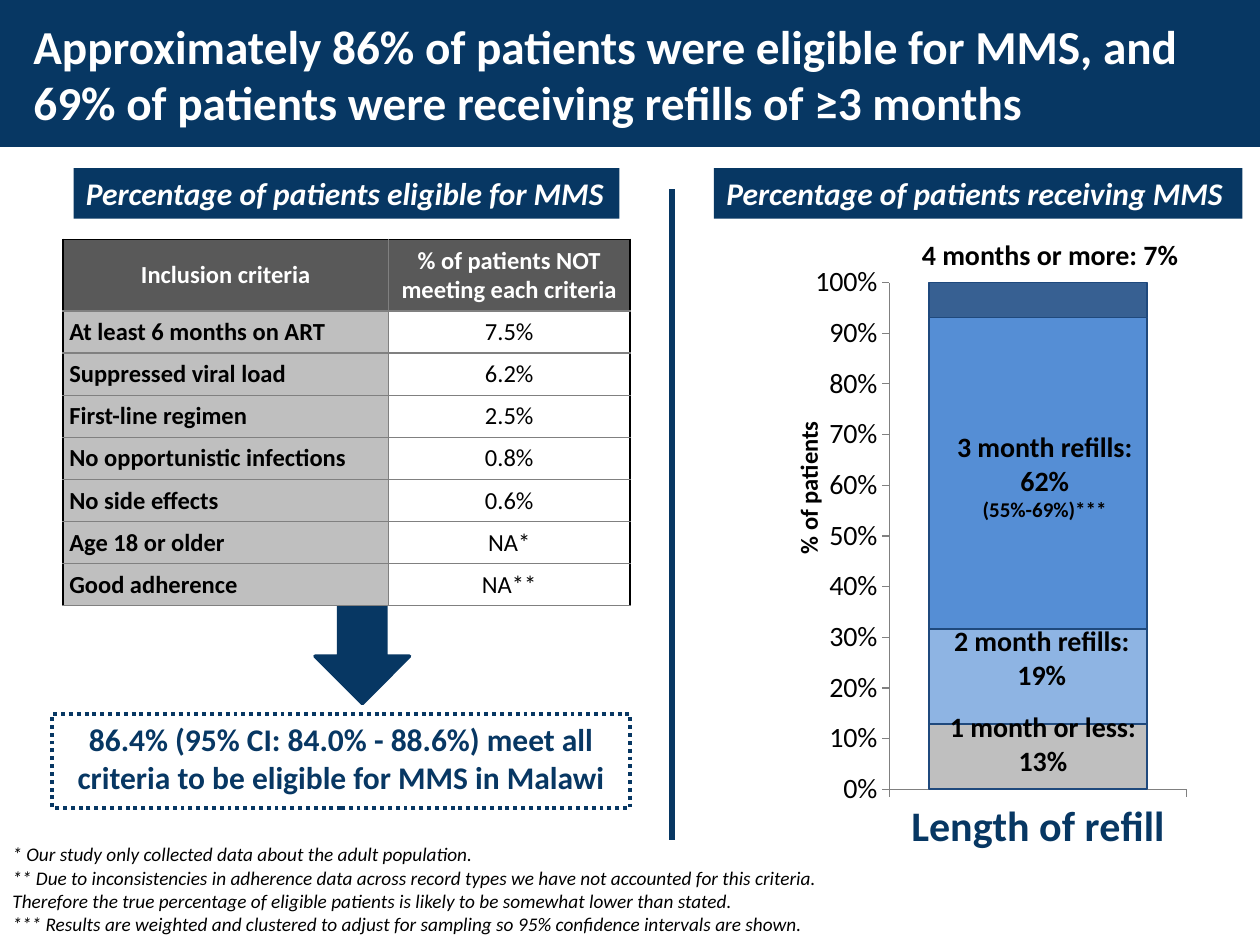
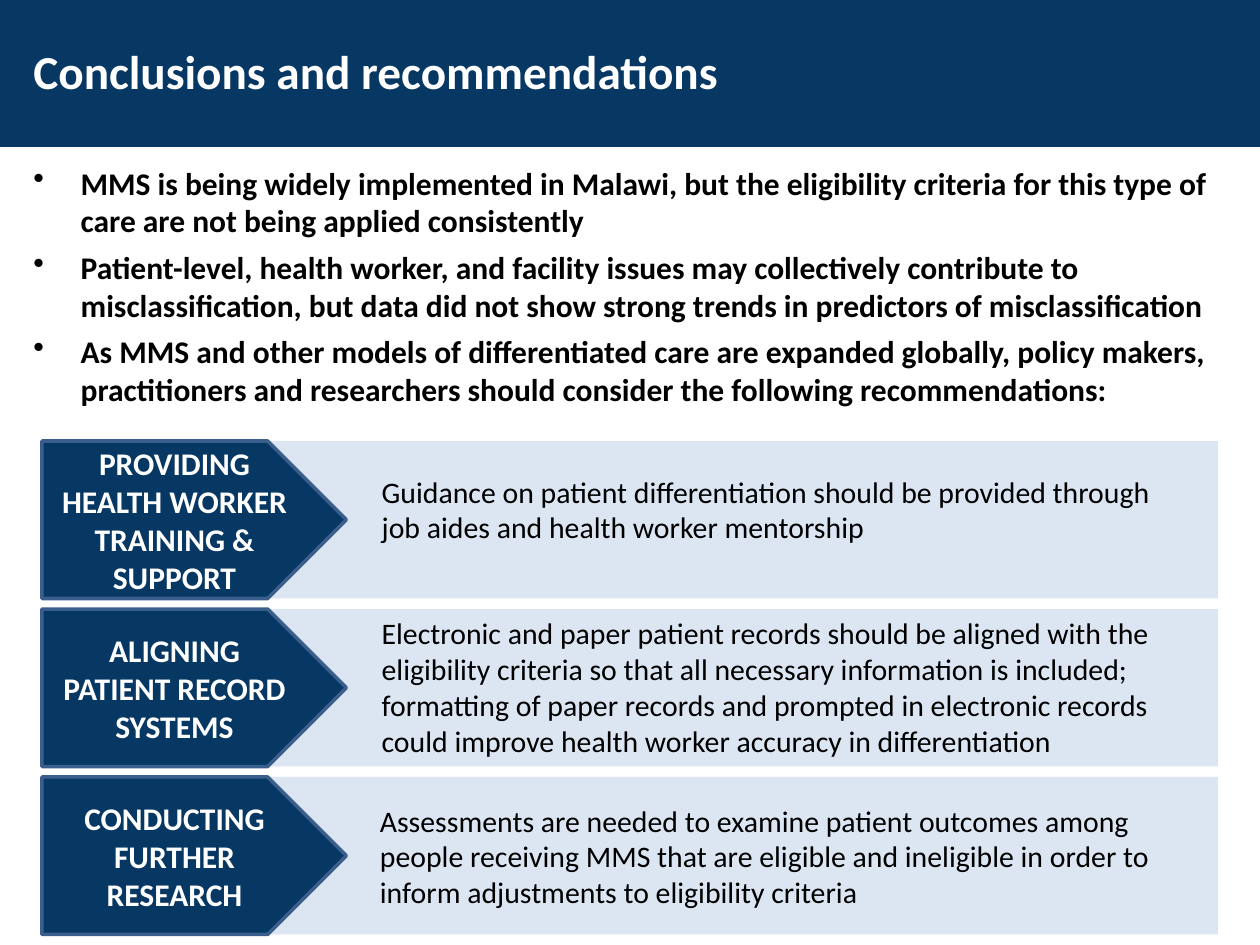
from dataclasses import dataclass
from typing import Optional

import lxml.etree
import pptx
import pptx.chart.data
import pptx.dml.color
import pptx.enum.chart
import pptx.enum.dml
import pptx.enum.shapes
import pptx.enum.text
import pptx.oxml.ns
import pptx.util

Pt = pptx.util.Pt
qn = pptx.oxml.ns.qn
Shape = pptx.enum.shapes.MSO_SHAPE
Align = pptx.enum.text.PP_ALIGN
Anchor = pptx.enum.text.MSO_ANCHOR


# Theme and descriptions of repeated elements
@dataclass(frozen=True)
class Theme:
    font: str = "Calibri"
    navy: str = "073763"
    edge: str = "3A5F8C"
    pale: str = "DCE6F2"
    white: str = "FFFFFF"
    black: str = "000000"
    header_gray: str = "595959"
    label_gray: str = "BFBFBF"
    rule_gray: str = "808080"
    bar_edge: str = "1F497D"
    refill_fills: tuple = ("BFBFBF", "8EB4E3", "558ED5", "376092")
    title: int = 27
    axis_title: int = 24
    body: int = 18
    detail: int = 17
    label: int = 16
    table: int = 14
    interval: int = 12
    footnote: int = 11


THEME = Theme()


@dataclass(frozen=True)
class Box:
    left: float
    top: float
    width: float
    height: float

    def lengths(self) -> tuple:
        return Pt(self.left), Pt(self.top), Pt(self.width), Pt(self.height)


@dataclass(frozen=True)
class Style:
    size: int
    color: str = THEME.black
    bold: bool = True
    italic: bool = False
    align: Align = Align.LEFT
    anchor: Anchor = Anchor.TOP
    wrap: bool = True


@dataclass(frozen=True)
class Refill:
    name: str
    percent: int
    label: str
    box: Box
    interval: str = ""


@dataclass(frozen=True)
class Recommendation:
    heading: str
    detail: str
    detail_box: Box


TITLE = Style(THEME.title, THEME.white, anchor=Anchor.MIDDLE)
HEADING = Style(THEME.body, THEME.white, italic=True, wrap=False)
FINDING = Style(THEME.body, THEME.navy, align=Align.CENTER)
PENTAGON = Style(THEME.body, THEME.white, align=Align.CENTER, anchor=Anchor.MIDDLE)
BULLET = Style(THEME.body)
DETAIL = Style(THEME.detail, bold=False)
BAR_LABEL = Style(THEME.label, align=Align.CENTER)
AXIS_LABEL = Style(THEME.table, align=Align.CENTER)
FOOTNOTE = Style(THEME.footnote, bold=False, italic=True)
TABLE_HEADER = Style(THEME.table, THEME.white, align=Align.CENTER, anchor=Anchor.MIDDLE)
TABLE_LABEL = Style(THEME.table)
TABLE_VALUE = Style(THEME.table, bold=False, align=Align.CENTER, anchor=Anchor.MIDDLE)

REFILLS = [
    Refill("1 month or less", 13, "1 month or less: 13%", Box(534, 402, 124, 46)),
    Refill("2 month refills", 19, "2 month refills: 19%", Box(536.5, 353, 117.5, 46)),
    Refill("3 month refills", 62, "3 month refills: 62%", Box(534, 242, 126, 60.5), "(55%-69%)***"),
    Refill("4 months or more", 7, "4 months or more: 7%", Box(516, 132, 168, 27)),
]
CRITERIA = [
    ("Inclusion criteria", "% of patients NOT meeting each criteria"),
    ("At least 6 months on ART", "7.5%"),
    ("Suppressed viral load", "6.2%"),
    ("First-line regimen", "2.5%"),
    ("No opportunistic infections", "0.8%"),
    ("No side effects", "0.6%"),
    ("Age 18 or older", "NA*"),
    ("Good adherence", "NA**"),
]
FOOTNOTES = [
    "* Our study only collected data about the adult population.",
    "** Due to inconsistencies in adherence data across record types we have not accounted for this "
    "criteria. Therefore the true percentage of eligible patients is likely to be somewhat lower than stated.",
    "*** Results are weighted and clustered to adjust for sampling so 95% confidence intervals are shown.",
]
CONCLUSIONS = [
    "MMS is being widely implemented in Malawi, but the eligibility criteria for this type of care are "
    "not being applied consistently",
    "Patient-level, health worker, and facility issues may collectively contribute to misclassification, "
    "but data did not show strong trends in predictors of misclassification",
    "As MMS and other models of differentiated care are expanded globally, policy makers, practitioners "
    "and researchers should consider the following recommendations:",
]
RECOMMENDATIONS = [
    Recommendation(
        "PROVIDING HEALTH WORKER TRAINING & SUPPORT",
        "Guidance on patient differentiation should be provided through job aides and health worker mentorship",
        Box(211, 267, 466.5, 48)),
    Recommendation(
        "ALIGNING PATIENT RECORD SYSTEMS",
        "Electronic and paper patient records should be aligned with the eligibility criteria so that all "
        "necessary information is included; formatting of paper records and prompted in electronic records "
        "could improve health worker accuracy in differentiation",
        Box(211, 348, 485, 90)),
    Recommendation(
        "CONDUCTING FURTHER RESEARCH",
        "Assessments are needed to examine patient outcomes among people receiving MMS that are eligible "
        "and ineligible in order to inform adjustments to eligibility criteria",
        Box(210, 455, 480, 69)),
]


# Drawing helpers
def rgb(color: str) -> pptx.dml.color.RGBColor:
    return pptx.dml.color.RGBColor.from_string(color)


def set_font(font, size: int, color: str, bold: bool = False, italic: bool = False) -> None:
    font.name, font.size, font.bold, font.italic = THEME.font, Pt(size), bold, italic
    font.color.rgb = rgb(color)


def write(frame, lines: list[str], style: Style) -> None:
    frame.text = "\n".join(lines)
    frame.word_wrap = style.wrap
    frame.vertical_anchor = style.anchor
    for paragraph in frame.paragraphs:
        paragraph.alignment = style.align
        set_font(paragraph.font, style.size, style.color, style.bold, style.italic)


def add_text(slide, box: Box, lines: list[str], style: Style):
    shape = slide.shapes.add_textbox(*box.lengths())
    write(shape.text_frame, lines, style)
    return shape


def add_shape(slide, kind: Shape, box: Box, fill: Optional[str] = None,
              line: Optional[str] = None, line_width: float = 2):
    shape = slide.shapes.add_shape(kind, *box.lengths())
    shape.shadow.inherit = False
    if fill:
        shape.fill.solid()
        shape.fill.fore_color.rgb = rgb(fill)
    else:
        shape.fill.background()
    if line:
        shape.line.color.rgb = rgb(line)
        shape.line.width = Pt(line_width)
    else:
        shape.line.fill.background()
    return shape


def add_title(slide, title: str, box: Box) -> None:
    add_shape(slide, Shape.RECTANGLE, Box(0, 0, 720, 84), THEME.navy)
    add_text(slide, box, [title], TITLE)


def add_heading(slide, box: Box, heading: str) -> None:
    shape = add_shape(slide, Shape.RECTANGLE, box, THEME.navy)
    write(shape.text_frame, [heading], HEADING)


def set_borders(cell, colors: dict[str, str]) -> None:
    properties = cell._tc.get_or_add_tcPr()
    for index, (side, color) in enumerate(colors.items()):
        line = lxml.etree.Element(qn(f"a:ln{side}"), w=str(Pt(1)))
        fill = lxml.etree.SubElement(line, qn("a:solidFill"))
        lxml.etree.SubElement(fill, qn("a:srgbClr"), val=color)
        properties.insert(index, line)


def add_criteria_table(slide) -> None:
    box = Box(36, 136.8, 324, 209)
    table = slide.shapes.add_table(len(CRITERIA), 2, *box.lengths()).table
    table.first_row = table.horz_banding = False
    for column, width in zip(table.columns, (186, 138)):
        column.width = Pt(width)
    for row_index, texts in enumerate(CRITERIA):
        is_header = row_index == 0
        table.rows[row_index].height = Pt(41 if is_header else 24)
        for column_index, text in enumerate(texts):
            cell = table.cell(row_index, column_index)
            cell.margin_left = cell.margin_right = cell.margin_top = cell.margin_bottom = Pt(3.6)
            style = TABLE_HEADER if is_header else (TABLE_LABEL, TABLE_VALUE)[column_index]
            write(cell.text_frame, [text], style)
            cell.vertical_anchor = style.anchor
            cell.fill.solid()
            fill = THEME.header_gray if is_header else (THEME.label_gray, THEME.white)[column_index]
            cell.fill.fore_color.rgb = rgb(fill)
            set_borders(cell, {
                "L": THEME.rule_gray if column_index else THEME.black,
                "R": THEME.black if column_index else THEME.rule_gray,
                "T": THEME.black if is_header else THEME.rule_gray,
                "B": THEME.rule_gray,
            })


def set_plot_layout(chart, **fractions: float) -> None:
    plot_area = chart._chartSpace.chart.plotArea
    layout = plot_area.find(qn("c:layout"))
    if layout is None:
        layout = lxml.etree.Element(qn("c:layout"))
        plot_area.insert(0, layout)
    manual = lxml.etree.SubElement(layout, qn("c:manualLayout"))
    settings = {"layoutTarget": "inner", "xMode": "edge", "yMode": "edge", **fractions}
    for name, value in settings.items():
        lxml.etree.SubElement(manual, qn(f"c:{name}"), val=str(value))


def add_refill_chart(slide) -> None:
    data = pptx.chart.data.CategoryChartData()
    data.categories = ["Length of refill"]
    for refill in REFILLS:
        data.add_series(refill.name, [refill.percent])
    kind = pptx.enum.chart.XL_CHART_TYPE.COLUMN_STACKED_100
    chart = slide.shapes.add_chart(kind, *Box(462, 144, 220.5, 349).lengths(), data).chart
    chart.has_title = chart.has_legend = False
    set_font(chart.font, THEME.label, THEME.black)
    plot = chart.plots[0]
    plot.gap_width, plot.overlap, plot.vary_by_categories = 36, 100, False
    for series, fill in zip(plot.series, THEME.refill_fills):
        series.format.fill.solid()
        series.format.fill.fore_color.rgb = rgb(fill)
        series.format.line.color.rgb = rgb(THEME.bar_edge)
        series.format.line.width = Pt(1)
    for axis in (chart.category_axis, chart.value_axis):
        axis.has_major_gridlines = False
        axis.major_tick_mark = pptx.enum.chart.XL_TICK_MARK.OUTSIDE
        axis.format.line.color.rgb = rgb(THEME.rule_gray)
    set_font(chart.category_axis.tick_labels.font, THEME.axis_title, THEME.navy, True)
    value_axis = chart.value_axis
    value_axis.minimum_scale, value_axis.maximum_scale, value_axis.major_unit = 0, 1, 0.1
    set_font(value_axis.tick_labels.font, THEME.label, THEME.black)
    value_axis.tick_labels.number_format = "0%"
    value_axis.tick_labels.number_format_is_linked = False
    set_plot_layout(chart, x=0.21, y=0.05, w=0.77, h=0.83)


# Slide 1: eligibility and refills
def build_eligibility(slide) -> None:
    arrow = add_shape(slide, Shape.RIGHT_ARROW, Box(177, 345, 60, 54), THEME.navy, THEME.navy)
    arrow.rotation = 90
    add_title(slide, "Approximately 86% of patients were eligible for MMS, and 69% of patients "
              "were receiving refills of ≥3 months", Box(12, 6.5, 692, 71))
    axis_label = add_text(slide, Box(371, 266.5, 182, 24.5), ["% of patients"], AXIS_LABEL)
    axis_label.rotation = 270

    add_refill_chart(slide)
    for refill in REFILLS:
        lines = [refill.label] + ([refill.interval] if refill.interval else [])
        label = add_text(slide, refill.box, lines, BAR_LABEL)
        if refill.interval:
            label.text_frame.paragraphs[1].font.size = Pt(THEME.interval)

    add_criteria_table(slide)
    add_text(slide, Box(0, 478, 480, 74), FOOTNOTES, FOOTNOTE)
    add_heading(slide, Box(42, 96, 312, 29), "Percentage of patients eligible for MMS")
    add_heading(slide, Box(408, 96, 302, 29), "Percentage of patients receiving MMS")

    divider = slide.shapes.add_connector(
        pptx.enum.shapes.MSO_CONNECTOR.STRAIGHT, Pt(384), Pt(108), Pt(384), Pt(480))
    divider.line.color.rgb = rgb(THEME.navy)
    divider.line.width = Pt(3)
    lxml.etree.SubElement(divider._element.spPr, qn("a:effectLst"))

    finding = add_shape(slide, Shape.RECTANGLE, Box(30, 408, 330, 54), line=THEME.navy, line_width=2.25)
    finding.line.dash_style = pptx.enum.dml.MSO_LINE.ROUND_DOT
    write(finding.text_frame, ["86.4% (95% CI: 84.0% - 88.6%) meet all criteria to be eligible "
                               "for MMS in Malawi"], FINDING)


# Slide 2: conclusions
def build_conclusions(slide) -> None:
    add_title(slide, "Conclusions and recommendations", Box(12, 3, 708, 75))
    conclusions = add_text(slide, Box(12, 90, 708, 174), CONCLUSIONS, BULLET)
    for paragraph in conclusions.text_frame.paragraphs:
        paragraph.space_after = Pt(5)
        properties = paragraph._p.get_or_add_pPr()
        properties.set("marL", str(Pt(27)))
        properties.set("indent", str(-Pt(27)))
        bullet = lxml.etree.Element(qn("a:buChar"), char="•")
        properties.find(qn("a:defRPr")).addprevious(bullet)

    for index, recommendation in enumerate(RECOMMENDATIONS):
        top = 252 + 96 * index
        add_shape(slide, Shape.RECTANGLE, Box(24, top, 672, 90), THEME.pale)
        pentagon = add_shape(slide, Shape.PENTAGON, Box(24, top, 174, 90), THEME.navy, THEME.edge)
        write(pentagon.text_frame, [recommendation.heading], PENTAGON)
        add_text(slide, recommendation.detail_box, [recommendation.detail], DETAIL)


def main() -> None:
    presentation = pptx.Presentation()
    presentation.slide_width, presentation.slide_height = Pt(720), Pt(540)
    for build in (build_eligibility, build_conclusions):
        build(presentation.slides.add_slide(presentation.slide_layouts[6]))
    presentation.save("out.pptx")


if __name__ == "__main__":
    main()
